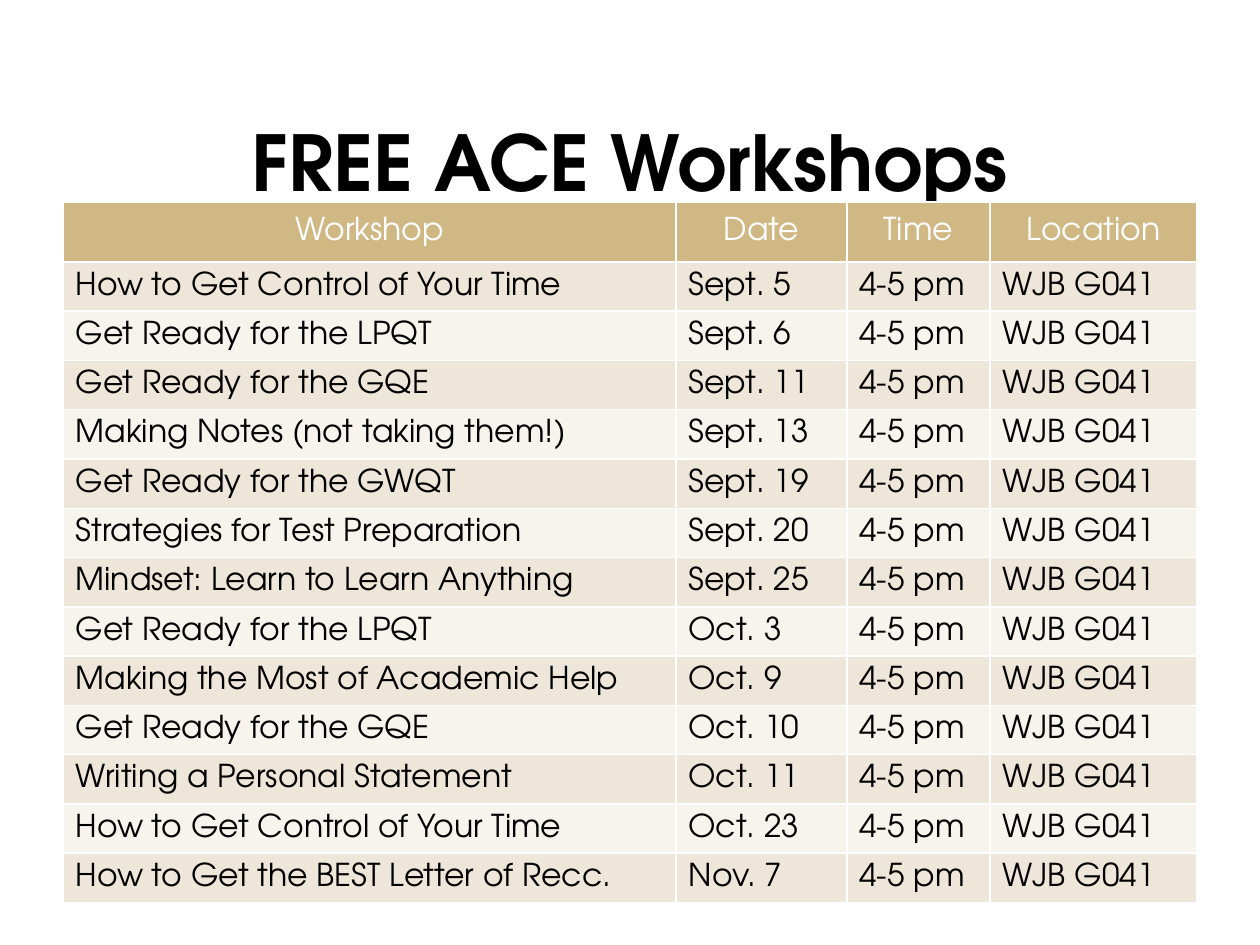
"""Build the workshop schedule slide."""
import lxml.etree
import pptx
import pptx.dml.color
import pptx.enum.text
import pptx.oxml.ns
import pptx.util

RGBColor = pptx.dml.color.RGBColor
PP_ALIGN = pptx.enum.text.PP_ALIGN
MSO_ANCHOR = pptx.enum.text.MSO_ANCHOR
qn = pptx.oxml.ns.qn

TITLE = "FREE ACE Workshops"
HEADERS = ("Workshop", "Date", "Time", "Location")
WORKSHOPS = [
    ("How to Get Control of Your Time", "Sept. 5"),
    ("Get Ready for the LPQT", "Sept. 6"),
    ("Get Ready for the GQE", "Sept. 11"),
    ("Making Notes (not taking them!)", "Sept. 13"),
    ("Get Ready for the GWQT", "Sept. 19"),
    ("Strategies for Test Preparation", "Sept. 20"),
    ("Mindset: Learn to Learn Anything", "Sept. 25"),
    ("Get Ready for the LPQT", "Oct. 3"),
    ("Making the Most of Academic Help", "Oct. 9"),
    ("Get Ready for the GQE", "Oct. 10"),
    ("Writing a Personal Statement", "Oct. 11"),
    ("How to Get Control of Your Time", "Oct. 23"),
    ("How to Get the BEST Letter of Recc.", "Nov. 7"),
]
TIME = "4-5 pm"
LOCATION = "WJB G041"

FONT = "TeX Gyre Adventor"
BLACK = RGBColor(0x00, 0x00, 0x00)
WHITE = RGBColor(0xFF, 0xFF, 0xFF)
GOLD = RGBColor(0xD0, 0xB8, 0x84)
BANDS = (RGBColor(0xEE, 0xE6, 0xD9), RGBColor(0xF7, 0xF3, 0xED))

COLUMNS = (613, 171, 143, 207)
HEADER_HEIGHT = 60
BODY_HEIGHT = 641
CELL_MARGIN = 5


def px(n):
    return pptx.util.Emu(round(n * 914400 / 126))


def style_text(tf, text, size, color, align, bold=False):
    tf.text = text
    p = tf.paragraphs[0]
    p.alignment = align
    font = p.runs[0].font
    font.name = FONT
    font.size = pptx.util.Pt(size)
    font.bold = bold
    font.color.rgb = color


def set_borders(cell):
    tc_pr = cell._tc.get_or_add_tcPr()
    for side in ("lnL", "lnR", "lnT", "lnB"):
        line = lxml.etree.SubElement(tc_pr, qn(f"a:{side}"), w=str(pptx.util.Pt(1)))
        fill = lxml.etree.SubElement(line, qn("a:solidFill"))
        lxml.etree.SubElement(fill, qn("a:srgbClr"), val=str(WHITE))


def add_title(s):
    tf = s.shapes.add_textbox(px(63), px(94), px(1134), px(134)).text_frame
    tf.word_wrap = True
    tf.vertical_anchor = MSO_ANCHOR.MIDDLE
    style_text(tf, TITLE, 44, BLACK, PP_ALIGN.CENTER, bold=True)


def add_schedule(s):
    rows = [HEADERS] + [(name, date, TIME, LOCATION) for name, date in WORKSHOPS]
    table = s.shapes.add_table(
        len(rows), len(COLUMNS), px(63), px(202),
        px(sum(COLUMNS)), px(HEADER_HEIGHT + BODY_HEIGHT),
    ).table
    for column, width in zip(table.columns, COLUMNS):
        column.width = px(width)
    for i, row in enumerate(rows):
        header = i == 0
        table.rows[i].height = px(HEADER_HEIGHT if header else BODY_HEIGHT / len(WORKSHOPS))
        for j, text in enumerate(row):
            cell = table.cell(i, j)
            cell.vertical_anchor = MSO_ANCHOR.MIDDLE
            cell.margin_top = cell.margin_bottom = px(CELL_MARGIN)
            set_borders(cell)
            cell.fill.solid()
            cell.fill.fore_color.rgb = GOLD if header else BANDS[(i - 1) % 2]
            style_text(
                cell.text_frame, text, 18, WHITE if header else BLACK,
                PP_ALIGN.CENTER if header else PP_ALIGN.LEFT,
            )


def main():
    prs = pptx.Presentation()
    prs.slide_width, prs.slide_height = px(1260), px(945)
    s = prs.slides.add_slide(prs.slide_layouts[6])
    add_title(s)
    add_schedule(s)
    prs.save("out.pptx")


if __name__ == "__main__":
    main()
